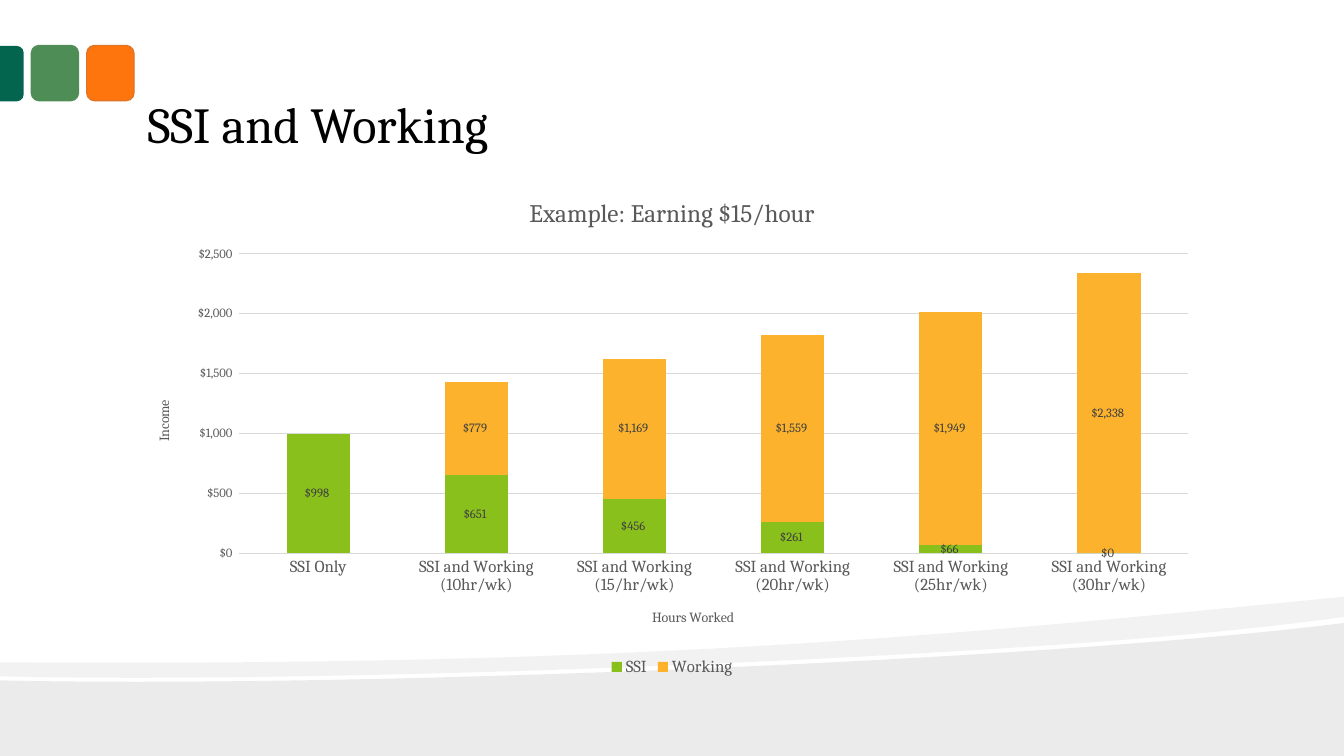
"""Build the slide "SSI and Working" with a stacked column chart of income."""
from lxml.etree import SubElement
from pptx import Presentation
from pptx.chart.data import CategoryChartData
from pptx.dml.color import RGBColor
from pptx.enum.chart import XL_CHART_TYPE as ChartType
from pptx.enum.chart import XL_LABEL_POSITION as LabelPosition
from pptx.enum.chart import XL_LEGEND_POSITION as LegendPosition
from pptx.enum.chart import XL_TICK_MARK as TickMark
from pptx.enum.shapes import MSO_SHAPE as Shape
from pptx.enum.text import MSO_ANCHOR as Anchor
from pptx.enum.text import PP_ALIGN as Align
from pptx.oxml.ns import qn
from pptx.util import Inches, Pt

COLORS = {
    "black": "000000", "axis": "595959", "label": "404040", "grid": "D9D9D9",
    "orange": "FE750E", "orange edge": "DE7426", "green": "4F8D56",
    "teal": "04654F", "SSI": "89C01C", "Working": "FCB22C",
}
FONT = "Cambria"
MONEY = '"$"#,##0_);[Red]\\("$"#,##0\\)'
WIDTH, HEIGHT = 13.33, 7.5
MARGIN = WIDTH / 10


def style_font(font, size, color):
    """Give a font the slide's typeface with a size and a colour."""
    for name, value in {"name": FONT, "size": Pt(size), "bold": False}.items():
        setattr(font, name, value)
    font.color.rgb = RGBColor.from_string(COLORS[color])


def bend(shape, starts):
    """Turn each three lines that begin at a start index into one cubic curve."""
    lines = list(shape.element.iter(qn("a:lnTo")))
    for start in starts:
        first, *others = lines[start:start + 3]
        first.tag = qn("a:cubicBezTo")
        for line in others:
            first.append(line[0])
            line.getparent().remove(line)


presentation = Presentation()
presentation.slide_width, presentation.slide_height = Inches(WIDTH), Inches(HEIGHT)
slide = presentation.slides.add_slide(presentation.slide_layouts[5])

hill = [(WIDTH, 6.18), (WIDTH, HEIGHT), (0, HEIGHT), (0, 6.75),
        (3.52, 6.83), (10.42, 6.55), (WIDTH, 6.18)]
ribbon = [(WIDTH, 5.92), (WIDTH, 6.12),
          (12.55, 6.23), (11.49, 6.33), (10.29, 6.41),
          (6.98, 6.63), (2.58, 6.77), (0, 6.71), (0, 6.57),
          (6.52, 6.62), (9.71, 6.27), (WIDTH, 5.92)]
for outline, curve_starts, opacity in ((hill, (3,), 8), (ribbon, (1, 4, 8), 5)):
    points = [(round(100 * x), round(100 * y)) for x, y in outline]
    builder = slide.shapes.build_freeform(*points[0], scale=Inches(0.01))
    builder.add_line_segments(points[1:], close=True)
    wave = builder.convert_to_shape()
    bend(wave, curve_starts)
    wave.shadow.inherit = False
    wave.line.fill.background()
    wave.fill.solid()
    wave.fill.fore_color.rgb = RGBColor.from_string(COLORS["black"])
    tint = wave.element.spPr.find(qn("a:solidFill")).find(qn("a:srgbClr"))
    SubElement(tint, qn("a:alpha"), val=str(opacity * 1000))

TILES = (
    (Shape.ROUNDED_RECTANGLE, (0.86, 0.45, 0.47, 0.55), "orange", "orange edge", 0),
    (Shape.ROUNDED_RECTANGLE, (0.31, 0.45, 0.47, 0.55), "green", "green", 0),
    (Shape.ROUND_2_SAME_RECTANGLE, (-0.16, 0.61, 0.55, 0.24), "teal", None, 90),
)
for kind, box, color, edge, rotation in TILES:
    tile = slide.shapes.add_shape(kind, *map(Inches, box))
    tile.shadow.inherit = False
    tile.rotation = rotation
    tile.fill.solid()
    tile.fill.fore_color.rgb = RGBColor.from_string(COLORS[color])
    if edge:
        tile.line.color.rgb = RGBColor.from_string(COLORS[edge])
        tile.line.width = Pt(0.85)
    else:
        tile.line.fill.background()
        tile.adjustments[0] = 0.29

title = slide.shapes.title
title_box = {"left": MARGIN, "top": 0.17, "width": 8 * MARGIN, "height": 1.42}
for name, value in title_box.items():
    setattr(title, name, Inches(value))
title.text_frame.text = "SSI and Working"
title_format = {
    "vertical_anchor": Anchor.BOTTOM, "word_wrap": True,
    "margin_left": Inches(0.13), "margin_right": Inches(0.13),
    "margin_top": Inches(0.07), "margin_bottom": Inches(0.07),
}
for name, value in title_format.items():
    setattr(title.text_frame, name, value)
paragraph = title.text_frame.paragraphs[0]
paragraph.alignment = Align.LEFT
style_font(paragraph.runs[0].font, 36, "black")

data = CategoryChartData(number_format=MONEY)
hours = ("10hr", "15/hr", "20hr", "25hr", "30hr")
data.categories = ["SSI Only"] + [f"SSI and Working ({hour}/wk)" for hour in hours]
data.add_series("SSI", (998, 651, 456, 261, 66, 0))
data.add_series("Working", (None, 779, 1169, 1559, 1949, 2338))
chart_box = (MARGIN, 1.75, 8 * MARGIN, 5)
chart = slide.shapes.add_chart(
    ChartType.COLUMN_STACKED, *map(Inches, chart_box), data).chart
style_font(chart.font, 10, "black")

chart.has_title = True
chart.has_legend = True
chart.legend.position = LegendPosition.BOTTOM
chart.legend.include_in_layout = False
style_font(chart.legend.font, 12, "axis")

category_axis, value_axis = chart.category_axis, chart.value_axis
titles = ((chart.chart_title, "Example: Earning $15/hour", 18),
          (category_axis.axis_title, "Hours Worked", 10),
          (value_axis.axis_title, "Income", 10))
for heading, words, size in titles:
    heading.text_frame.text = words
    style_font(heading.text_frame.paragraphs[0].runs[0].font, size, "axis")

for axis, size in ((category_axis, 12), (value_axis, 9)):
    axis.major_tick_mark = axis.minor_tick_mark = TickMark.NONE
    style_font(axis.tick_labels.font, size, "axis")
value_axis.tick_labels.number_format = MONEY
value_axis.tick_labels.number_format_is_linked = False
value_axis.format.line.fill.background()
for line in (category_axis.format.line, value_axis.major_gridlines.format.line):
    line.color.rgb = RGBColor.from_string(COLORS["grid"])
    line.width = Pt(0.75)
value_axis.minimum_scale, value_axis.maximum_scale = 0, 2500
value_axis.major_unit = 500

plot = chart.plots[0]
plot.gap_width, plot.overlap, plot.vary_by_categories = 150, 100, False
label_format = {
    "show_value": True, "position": LabelPosition.CENTER,
    "number_format": MONEY, "number_format_is_linked": False,
}
for series in plot.series:
    series.format.fill.solid()
    series.format.fill.fore_color.rgb = RGBColor.from_string(COLORS[series.name])
    for name, value in label_format.items():
        setattr(series.data_labels, name, value)
    style_font(series.data_labels.font, 9, "label")

presentation.save("out.pptx")
